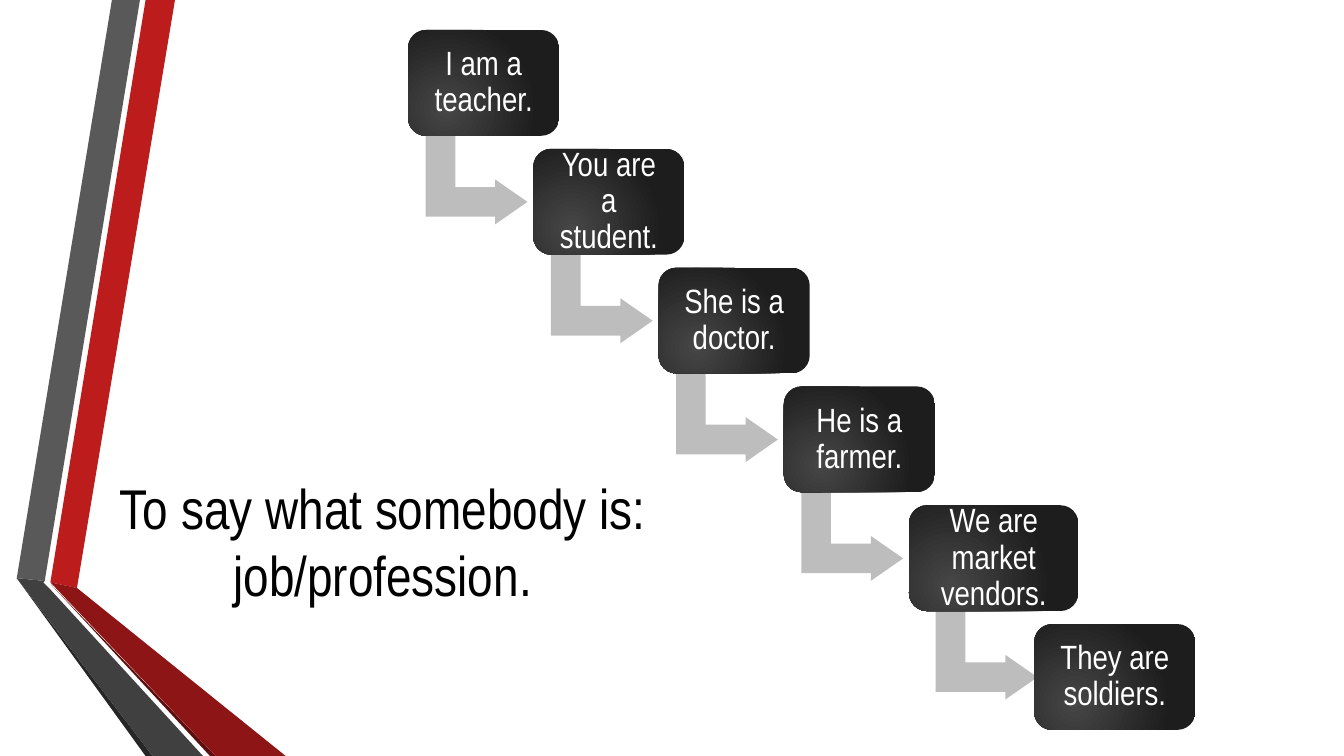
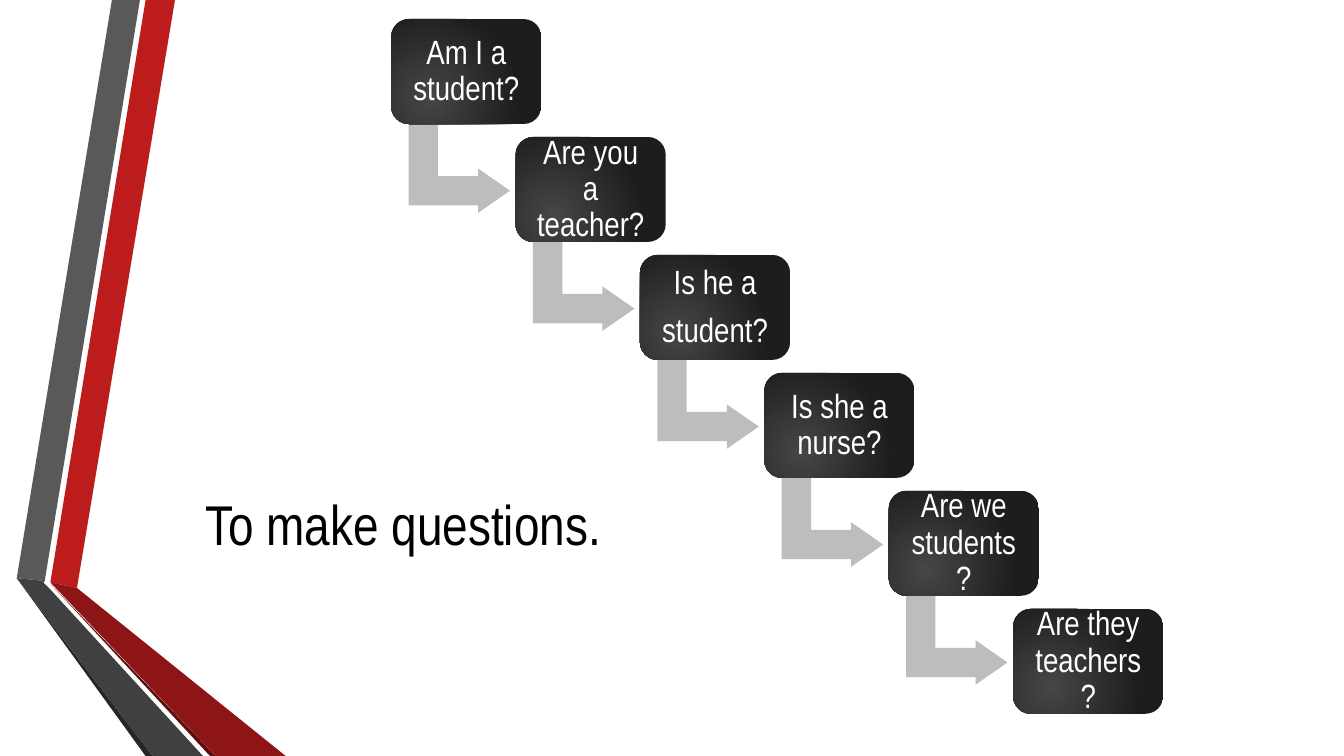
from lxml import etree
from pptx import Presentation
from pptx.dml.color import RGBColor
from pptx.enum.shapes import MSO_SHAPE
from pptx.enum.text import MSO_ANCHOR, MSO_AUTO_SIZE, PP_ALIGN
from pptx.oxml.ns import qn
from pptx.util import Pt

BENT_ARROW = MSO_SHAPE.BENT_UP_ARROW
ROUNDED = MSO_SHAPE.ROUNDED_RECTANGLE
CENTER = PP_ALIGN.CENTER
MIDDLE = MSO_ANCHOR.MIDDLE
NO_AUTOFIT = MSO_AUTO_SIZE.NONE

FONT = "Arial Narrow"
BLACK = RGBColor(0x00, 0x00, 0x00)
WHITE = RGBColor(0xFF, 0xFF, 0xFF)
CARD_LIGHT = RGBColor(0x46, 0x46, 0x46)
CARD_DARK = RGBColor(0x1D, 0x1D, 0x1D)
ARROW_GREY = RGBColor(0xBD, 0xBD, 0xBD)
RED = RGBColor(0xBC, 0x1C, 0x1C)
RED_SHADE = RGBColor(0x8D, 0x15, 0x15)
RED_EDGE = RGBColor(0x5E, 0x0E, 0x0E)
GREY = RGBColor(0x59, 0x59, 0x59)
GREY_SHADE = RGBColor(0x40, 0x40, 0x40)
GREY_EDGE = RGBColor(0x26, 0x26, 0x26)

RIBBONS = [
    (RED, [(36, 416.2), (55.4, 419.8), (124.6, 0), (104.4, 0)]),
    (GREY, [(100.1, 0), (79.9, 0), (11.5, 412.6), (31.7, 415.4)]),
    (GREY_EDGE, [(11.5, 412.6), (104.4, 540), (108.7, 540)]),
    (RED_EDGE, [(36, 416.9), (149.8, 540), (154.1, 540)]),
    (RED_SHADE, [(36, 416.2), (154.1, 540), (203.8, 540), (55.4, 419.8)]),
    (GREY_SHADE, [(145.4, 540), (34.6, 419.8), (31, 416.2), (31.7, 415.4),
                  (11.5, 412.6), (108.7, 540)]),
]

SLIDES = [
    {
        "title": "To say what somebody is:\njob/profession.",
        "title_box": (-62.6, 347.8, 671.8, 118.8),
        "title_margins": (0, 42),
        "start": (291.5, 21.4),
        "step": (89.45, 84.87),
        "card": (108, 75.6),
        "arrow": (64, 72.7),
        "cards": [("I am a teacher.", 0), ("You are a student.", 0),
                  ("She is a doctor.", 0), ("He is a farmer.", 0),
                  ("We are market vendors.", 13), ("They are soldiers.", 7.2)],
    },
    {
        "title": "To make questions.",
        "title_box": (-106.6, 304.6, 789.1, 138.2),
        "title_margins": (3.6, 3.6),
        "start": (279.4, 13.6),
        "step": (88.85, 84.25),
        "card": (107.3, 75),
        "arrow": (63.5, 72.5),
        "cards": [("Am I a student?", 0), ("Are you a teacher?", 0),
                  ("Is he a\nstudent?", 0), ("Is she a nurse?", 0),
                  ("Are we students?", 0), ("Are they teachers?", 0)],
    },
]


def write_text(shape, text, size, color, line_spacing=1.0, space_after=0,
               side_margin=7.2, top_margin=3.6, bottom_margin=3.6):
    frame = shape.text_frame
    frame.text = text
    frame.word_wrap = True
    frame.auto_size = NO_AUTOFIT
    frame.vertical_anchor = MIDDLE
    frame.margin_left = frame.margin_right = Pt(side_margin)
    frame.margin_top = Pt(top_margin)
    frame.margin_bottom = Pt(bottom_margin)
    for paragraph in frame.paragraphs:
        paragraph.alignment = CENTER
        paragraph.line_spacing = line_spacing
        paragraph.space_after = Pt(space_after)
        for run in paragraph.runs:
            run.font.name = FONT
            run.font.size = Pt(size)
            run.font.color.rgb = color


def make_plain(shape, color):
    shape.shadow.inherit = False
    shape.line.fill.background()
    shape.fill.solid()
    shape.fill.fore_color.rgb = color


presentation = Presentation()
presentation.slide_width = Pt(960)
presentation.slide_height = Pt(540)
layout = presentation.slide_layouts.get_by_name("Title Only")
slides = [presentation.slides.add_slide(layout) for content in SLIDES]

for index, (color, points) in enumerate(RIBBONS):
    builder = slides[0].shapes.build_freeform(*points[0], scale=Pt(1))
    builder.add_line_segments(points[1:], close=True)
    ribbon = builder.convert_to_shape()
    make_plain(ribbon, color)
    ribbon.name = f"Ribbon {index + 1}"
    ribbon.element.nvSpPr.cNvPr.set("id", str(20 + index))
    layout.shapes.element.insert(2 + index, ribbon.element)

for slide, content in zip(slides, SLIDES):
    title = slide.shapes.title
    title.left, title.top, title.width, title.height = map(Pt, content["title_box"])
    top_margin, bottom_margin = content["title_margins"]
    write_text(title, content["title"], 40, BLACK,
               top_margin=top_margin, bottom_margin=bottom_margin)

    start_x, start_y = content["start"]
    step_x, step_y = content["step"]
    card_width, card_height = content["card"]
    arrow_width, arrow_height = content["arrow"]
    last = len(content["cards"]) - 1

    for index, (text, extra_width) in enumerate(content["cards"]):
        left = start_x + index * step_x
        top = start_y + index * step_y

        if index < last:
            arrow = slide.shapes.add_shape(
                BENT_ARROW, Pt(left + 16.9 + extra_width / 2), Pt(top + 70.5),
                Pt(arrow_width), Pt(arrow_height))
            arrow.rotation = 90
            for number, value in enumerate((0.33, 0.25, 0.36)):
                arrow.adjustments[number] = value
            make_plain(arrow, ARROW_GREY)

        card = slide.shapes.add_shape(
            ROUNDED, Pt(left), Pt(top), Pt(card_width + extra_width), Pt(card_height))
        card.adjustments[0] = 0.17
        make_plain(card, CARD_DARK)
        card.fill.gradient()
        for stop, color in zip(card.fill.gradient_stops, (CARD_LIGHT, CARD_DARK)):
            stop.color.rgb = color
        gradient = card.element.spPr.find(qn("a:gradFill"))
        gradient.remove(gradient.find(qn("a:lin")))
        radial = etree.SubElement(gradient, qn("a:path"), path="circle")
        etree.SubElement(radial, qn("a:fillToRect"),
                         l="50000", t="100000", r="100000", b="50000")
        write_text(card, text, 24, WHITE, line_spacing=0.9, space_after=8.4,
                   side_margin=10.8, top_margin=10.8, bottom_margin=10.8)

presentation.save("out.pptx")
